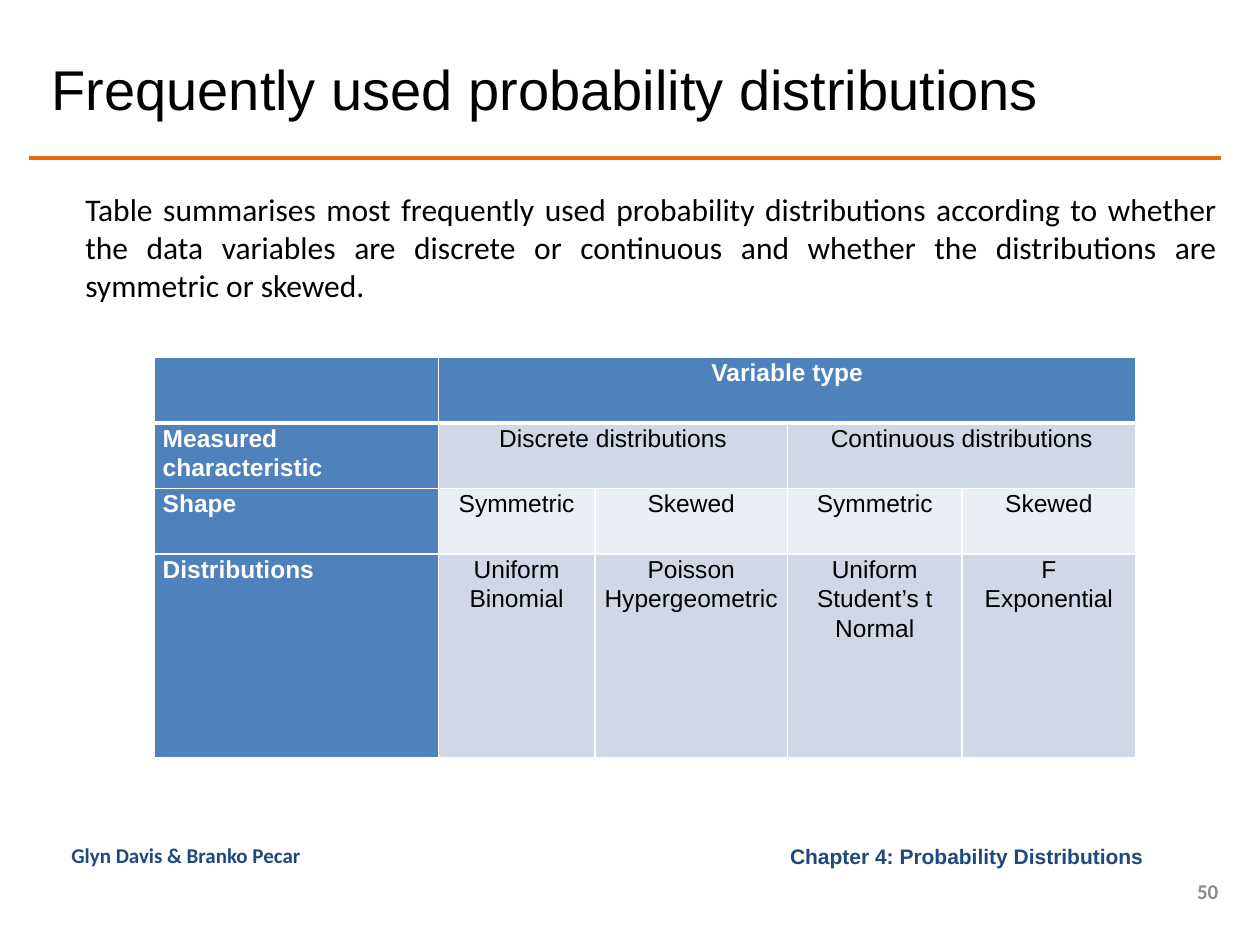
from dataclasses import dataclass

from lxml import etree
from pptx import Presentation
from pptx.dml.color import RGBColor
from pptx.enum.shapes import MSO_CONNECTOR
from pptx.enum.text import MSO_ANCHOR, PP_ALIGN
from pptx.oxml.ns import qn
from pptx.util import Cm, Pt

LEFT, CENTER, RIGHT, JUSTIFY = (
    PP_ALIGN.LEFT, PP_ALIGN.CENTER, PP_ALIGN.RIGHT, PP_ALIGN.JUSTIFY)
TOP, MIDDLE = MSO_ANCHOR.TOP, MSO_ANCHOR.MIDDLE
STRAIGHT = MSO_CONNECTOR.STRAIGHT
BLANK_LAYOUT = 6


@dataclass(frozen=True)
class Theme:
    heading_font: str = "Arial"
    body_font: str = "Calibri"
    title_size: int = 32
    body_size: int = 18
    table_size: int = 14
    footer_size: int = 12
    text: str = "000000"
    white: str = "FFFFFF"
    rule: str = "E46C0A"
    footer: str = "1F497D"
    page_number: str = "8C8C8C"
    header_fill: str = "4F81BD"
    band_fills: tuple = ("E9EDF4", "D0D8E8")
    border: float = 1
    header_border: float = 3


class SlideBuilder:
    def __init__(self, slide, theme):
        self.slide = slide
        self.theme = theme

    def format_text(self, frame, font, size, color, bold=False, align=LEFT,
                    line_spacing=None):
        for paragraph in frame.paragraphs:
            paragraph.alignment = align
            if line_spacing:
                paragraph.line_spacing = line_spacing
            for run in paragraph.runs:
                run.font.name = font
                run.font.size = Pt(size)
                run.font.bold = bold
                run.font.color.rgb = RGBColor.from_string(color)

    def text(self, wording, box, font, size, color, anchor=MIDDLE, **style):
        """Add a text box; box is left, top, width, height in centimetres."""
        frame = self.slide.shapes.add_textbox(*map(Cm, box)).text_frame
        frame.word_wrap = True
        frame.vertical_anchor = anchor
        frame.text = wording
        self.format_text(frame, font, size, color, **style)

    def rule(self, left, right, y):
        line = self.slide.shapes.add_connector(
            STRAIGHT, Cm(left), Cm(y), Cm(right), Cm(y))
        line.line.color.rgb = RGBColor.from_string(self.theme.rule)
        line.line.width = Pt(2)
        etree.SubElement(line._element.spPr, qn("a:effectLst"))

    def cell_borders(self, cell, row):
        properties = cell._tc.get_or_add_tcPr()
        widths = dict.fromkeys(("L", "R", "T", "B"), self.theme.border)
        if row == 0:
            widths["B"] = self.theme.header_border
        elif row == 1:
            widths["T"] = self.theme.header_border
        for side, width in widths.items():
            line = etree.SubElement(properties, qn(f"a:ln{side}"), w=str(Pt(width)))
            fill = etree.SubElement(line, qn("a:solidFill"))
            etree.SubElement(fill, qn("a:srgbClr"), val=self.theme.white)

    def table(self, left, top, widths, heights, rows, merges):
        """Add a table whose first row and first column are headers."""
        theme = self.theme
        table = self.slide.shapes.add_table(
            len(heights), len(widths), Cm(left), Cm(top),
            Cm(sum(widths)), Cm(sum(heights))).table
        for column, width in zip(table.columns, widths):
            column.width = Cm(width)
        for table_row, height in zip(table.rows, heights):
            table_row.height = Cm(height)
        for row, wordings in enumerate(rows):
            for column, wording in enumerate(wordings):
                cell = table.cell(row, column)
                header = row == 0 or column == 0
                self.cell_borders(cell, row)
                cell.fill.solid()
                cell.fill.fore_color.rgb = RGBColor.from_string(
                    theme.header_fill if header else theme.band_fills[row % 2])
                cell.margin_left = cell.margin_right = Cm(0.18)
                cell.margin_top = cell.margin_bottom = 0
                cell.text_frame.text = wording
                self.format_text(
                    cell.text_frame, theme.heading_font, theme.table_size,
                    theme.white if header else theme.text, bold=header,
                    align=CENTER if column else JUSTIFY, line_spacing=1.07)
        for row, first, last in merges:
            table.cell(row, first).merge(table.cell(row, last))


def main():
    presentation = Presentation()
    presentation.slide_width, presentation.slide_height = Cm(25.4), Cm(19.05)
    slide = presentation.slides.add_slide(presentation.slide_layouts[BLANK_LAYOUT])
    theme = Theme()
    builder = SlideBuilder(slide, theme)

    builder.rule(0.58, 24.61, 3.18)
    builder.text("Frequently used probability distributions",
                 (0.79, 0.79, 23.32, 1.98),
                 theme.heading_font, theme.title_size, theme.text)
    builder.text("Table summarises most frequently used probability distributions "
                 "according to whether the data variables are discrete or continuous "
                 "and whether the distributions are symmetric or skewed.",
                 (1.47, 3.71, 23.32, 2.57),
                 theme.body_font, theme.body_size, theme.text,
                 anchor=TOP, align=JUSTIFY)

    builder.table(
        3.1, 7.21,
        widths=(5.74, 3.15, 3.89, 3.51, 3.51),
        heights=(1.32, 1.32, 1.32, 4.11),
        rows=(
            ("", "Variable type", "", "", ""),
            ("Measured characteristic", "Discrete distributions", "",
             "Continuous distributions", ""),
            ("Shape", "Symmetric", "Skewed", "Symmetric", "Skewed"),
            ("Distributions", "Uniform\nBinomial", "Poisson\nHypergeometric",
             "Uniform\nStudent’s t\nNormal", "F\nExponential"),
        ),
        merges=((0, 1, 4), (1, 1, 2), (1, 3, 4)))

    builder.text("Glyn Davis & Branko Pecar", (1.19, 16.87, 7.54, 0.79),
                 theme.body_font, theme.footer_size, theme.footer,
                 anchor=TOP, bold=True)
    builder.text("Chapter 4: Probability Distributions ", (13.89, 16.87, 9.53, 0.79),
                 theme.heading_font, theme.footer_size, theme.footer,
                 bold=True, align=RIGHT)
    builder.text("50", (23.62, 17.65, 1.19, 0.61),
                 theme.body_font, theme.footer_size, theme.page_number,
                 bold=True, align=RIGHT)

    presentation.save("out.pptx")


if __name__ == "__main__":
    main()
